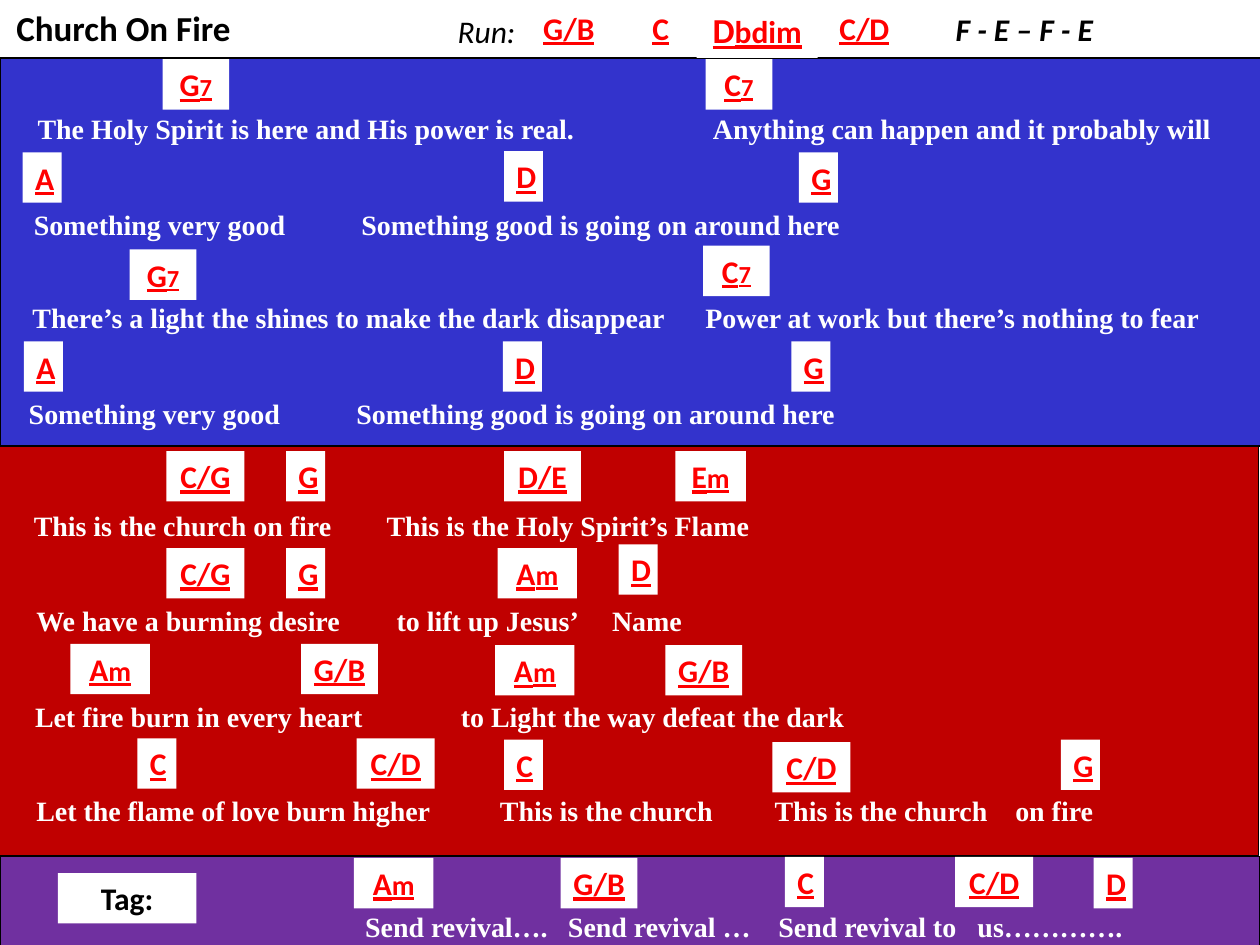
from lxml import etree
from pptx import Presentation
from pptx.dml.color import RGBColor
from pptx.enum import shapes, text
from pptx.oxml.ns import qn
from pptx.util import Pt

THEME = {
    "paper": "FFFFFF", "ink": "000000", "chord": "FF0000",
    "verse": "3333CC", "chorus": "C00000", "tag": "7030A0",
    "chord_font": "Calibri", "lyric_font": "Times New Roman",
    "title_size": 20, "chord_size": 18, "minor_size": 16,
    "seventh_size": 14, "lyric_size": 16,
}
COLUMNS, ROWS = 100, 75
INSET = 1  # default side inset of a text frame, in columns
CHIP_HEIGHT, LYRIC_HEIGHT = 4, 3.7

deck = Presentation()
deck.slide_width, deck.slide_height = Pt(720), Pt(540)
column, row = deck.slide_width / COLUMNS, deck.slide_height / ROWS
page = deck.slides.add_slide(deck.slide_layouts[5])


def add_panel(left, top, width, height, fill, outlined=False):
    """Add a plain rectangle placed on the page grid."""
    panel = page.shapes.add_shape(
        shapes.MSO_SHAPE.RECTANGLE, round(left * column), round(top * row),
        round(width * column), round(height * row))
    panel.shadow.inherit = False
    panel.fill.solid()
    panel.fill.fore_color.rgb = RGBColor.from_string(THEME[fill])
    if outlined:
        panel.line.color.rgb = RGBColor.from_string(THEME["ink"])
        panel.line.width = Pt(0.75)
    else:
        panel.line.fill.background()
    return panel


def write(box, spans, font, color, align, **styles):
    """Write (words, size) spans as the box's single paragraph."""
    frame = box.text_frame
    frame.word_wrap = True
    frame.auto_size = text.MSO_AUTO_SIZE.NONE
    frame.vertical_anchor = text.MSO_ANCHOR.TOP
    para = frame.paragraphs[0]
    para.alignment = align
    for words, size in spans:
        span = para.add_run()
        span.text = words
        span.font.color.rgb = RGBColor.from_string(THEME[color])
        for name, value in {"name": font, "size": Pt(size), **styles}.items():
            setattr(span.font, name, value)
    return para


LEFT, CENTER, RIGHT = text.PP_ALIGN.LEFT, text.PP_ALIGN.CENTER, text.PP_ALIGN.RIGHT
chord_font, chord_size = THEME["chord_font"], THEME["chord_size"]

# Title
title = page.shapes.title
title.left, title.top = round(0.3 * column), 0
title.width, title.height = round(31 * column), round(4.4 * row)
write(title, [("Church On Fire", THEME["title_size"])], chord_font, "ink", LEFT, bold=True)

# Coloured bands, from the bottom up
for left, top, width, height, fill in [
    (0, 68, 100, 7.4, "tag"),
    (-0.1, 35.2, 100, 32.7, "chorus"),
    (0, 4.6, 100.2, 30.8, "verse"),
]:
    add_panel(left, top, width, height, fill, outlined=True)

# Lyric lines: top row, then the column where each phrase starts
lyrics = [
    (8.4, [(3, "The Holy Spirit is here and His power is real."),
           (56.6, "Anything can happen and it probably will")]),
    (16, [(2.7, "Something very good"),
          (28.7, "Something good is going on around here")]),
    (23.4, [(2.6, "There’s a light the shines to make the dark disappear"),
            (56, "Power at work but there’s nothing to fear")]),
    (31, [(2.3, "Something very good"),
          (28.3, "Something good is going on around here")]),
    (39.9, [(2.7, "This is the church on fire"),
            (30.7, "This is the Holy Spirit’s Flame")]),
    (47.4, [(2.9, "We have a burning desire"), (31.5, "to lift up Jesus’"),
            (48.6, "Name")]),
    (55, [(2.8, "Let fire burn in every heart"),
          (36.6, "to Light the way defeat the dark")]),
    (62.5, [(2.9, "Let the flame of love burn higher"), (39.7, "This is the church"),
            (61.5, "This is the church"), (80.6, "on fire")]),
    (71.7, [(29, "Send revival…."), (45.1, "Send revival …"),
            (61.8, "Send revival to"), (77.6, "us………….")]),
]
for top, phrases in lyrics:
    box = page.shapes.add_textbox(0, round(top * row), deck.slide_width,
                                  round(LYRIC_HEIGHT * row))
    line = "".join("\t" + words for start, words in phrases)
    para = write(box, [(line, THEME["lyric_size"])], THEME["lyric_font"], "paper",
                 LEFT, bold=True)
    # Tab stops hold the phrases under their chords
    stops = etree.SubElement(para._p.get_or_add_pPr(), qn("a:tabLst"))
    for start, words in phrases:
        etree.SubElement(stops, qn("a:tab"), pos=str(round((start - INSET) * column)),
                         algn="l")

# Chord chips: top row, then the chord and its column; a third value nudges it down
chords = [
    (0.2, [("G/B", 42.1), ("C", 50.8), ("C/D", 65.5)]),
    (4.7, [("G7", 12.9), ("C7", 56)]),
    (12.1, [("A", 1.8), ("D", 40, -0.1), ("G", 63.4)]),
    (19.8, [("G7", 10.3), ("C7", 55.8, -0.3)]),
    (27.1, [("A", 1.9), ("D", 39.9), ("G", 62.8)]),
    (35.8, [("C/G", 13.2), ("G", 22.7), ("D/E", 40), ("Em", 53.6)]),
    (43.5, [("C/G", 13.2), ("G", 22.7), ("Am", 39.5), ("D", 49.1, -0.3)]),
    (51.1, [("Am", 5.6), ("G/B", 23.9), ("Am", 39.3, 0.1), ("G/B", 52.8, 0.1)]),
    (58.6, [("C", 10.9), ("C/D", 28.3), ("C", 40, 0.1), ("C/D", 61.3, 0.3),
            ("G", 84.2, 0.1)]),
    (68.1, [("Am", 28.1), ("G/B", 44.5), ("C", 62.3, -0.1), ("C/D", 75.8, -0.1),
            ("D", 86.8)]),
]
chip_widths = {"G7": 5.3, "C7": 5.3, "Am": 6.3, "Em": 5.6, "G/B": 6.1, "D/E": 6.1,
               "C/D": 6.2, "C/G": 6.2}
suffix_sizes = {"7": THEME["seventh_size"], "m": THEME["minor_size"]}
for top, chips in chords:
    for chord, left, *nudge in chips:
        chip = add_panel(left, top + sum(nudge), chip_widths.get(chord, 3.1),
                         CHIP_HEIGHT, "paper")
        if chord[-1] in suffix_sizes:
            spans = [(chord[:-1], chord_size), (chord[-1], suffix_sizes[chord[-1]])]
        else:
            spans = [(chord, chord_size)]
        write(chip, spans, chord_font, "chord", CENTER, bold=True, underline=True)

# Diminished chord of the run, with a larger root
diminished = add_panel(55.3, 0.2, 9.6, 4.4, "paper")
write(diminished, [("D", THEME["title_size"]), ("bdim", chord_size)], chord_font,
      "chord", CENTER, bold=True, underline=True)

# Black labels
for words, left, top, width, align, styles in [
    ("Tag:", 4.6, 69.3, 11, CENTER, {"bold": True}),
    ("F - E – F - E", 71.7, 0.3, 19.2, CENTER, {"bold": True, "italic": True}),
    ("Run:", 34.2, 0.5, 7.7, RIGHT, {"italic": True}),
]:
    label = add_panel(left, top, width, CHIP_HEIGHT, "paper")
    write(label, [(words, chord_size)], chord_font, "ink", align, **styles)

deck.save("out.pptx")
